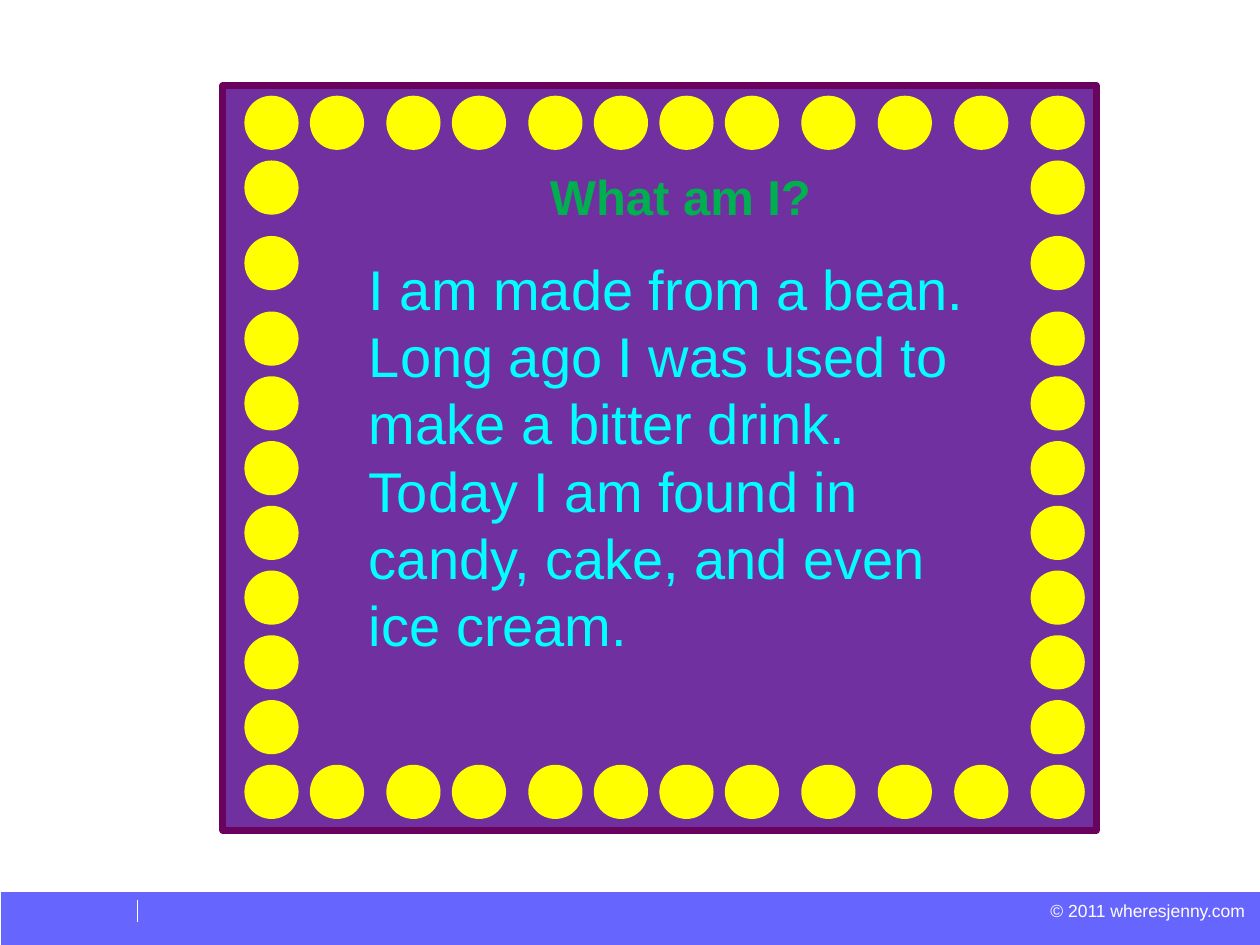
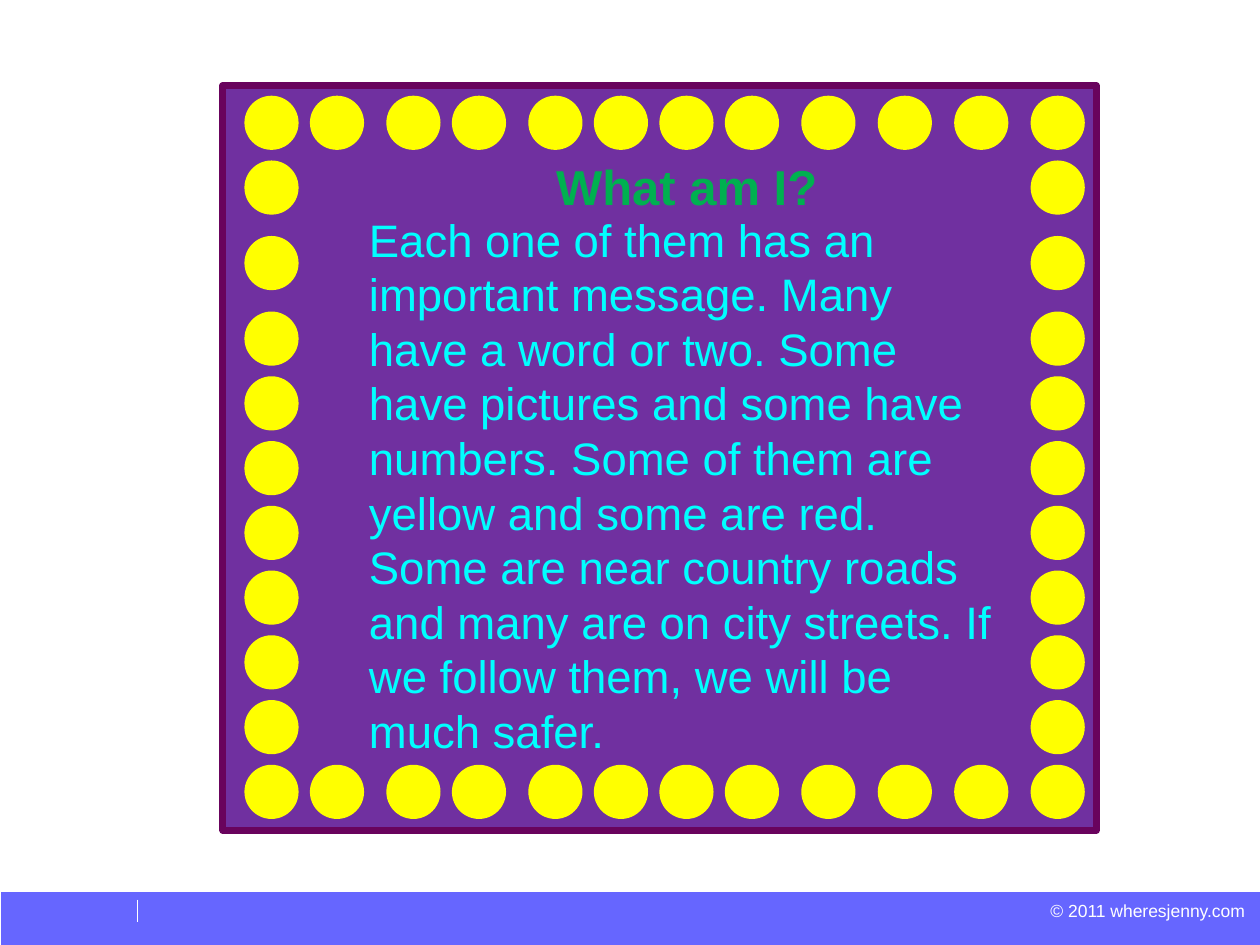
"""Build two riddle slides, each on a purple board framed by yellow dots."""
import itertools

import pptx
import pptx.dml.color
import pptx.enum.shapes
import pptx.enum.text
import pptx.oxml
import pptx.util
from pptx.util import Inches

RIDDLES = [
    {
        "heading": "What am I?",
        "heading_at": (2.78, 1.27, 5.24, 0.55),
        "clue": "I am made from a bean. Long ago I was used to make a bitter drink. "
                "Today I am found in candy, cake, and even ice cream.",
        "clue_at": (2.83, 1.97, 5.24, 3.37),
        "clue_size": 32,
    },
    {
        "heading": "What am I?",
        "heading_at": (2.83, 1.19, 5.24, 0.55),
        "clue": "Each one of them has an important message. Many have a word or two. "
                "Some have pictures and some have numbers. Some of them are yellow and "
                "some are red. Some are near country roads and many are on city streets. "
                "If we follow them, we will be much safer.",
        "clue_at": (2.83, 1.63, 5.24, 4.5),
        "clue_size": 26,
    },
]
COPYRIGHT = "© 2011 wheresjenny.com"
COLOURS = {"board": "7030A0", "border": "69035D", "dot": "FFFF00", "heading": "00B050",
           "clue": "00FFFF", "band": "6666FF", "footer": "FFFFFF"}
BOARD_AT = (1.77, 0.68, 6.93, 5.91)
BAND_AT = (0.01, 7.08, 9.99, 0.42)
COPYRIGHT_AT = (8.32, 7.14, 1.56, 0.17)
DIVIDER_AT = (1.09, 7.14, 1.09, 7.32)
DOT_SIZE = 0.43
ACROSS = {"start": 1.94, "end": 8.18, "gaps": (6, 7, 6, 7, 6, 6, 6, 7, 7, 7, 7)}
DOWN = {"start": 0.76, "end": 6.07, "gaps": (6, 7, 7, 6, 6, 6, 6, 6, 6, 6)}
SHAPES = pptx.enum.shapes.MSO_SHAPE
ALIGN = pptx.enum.text.PP_ALIGN


def colour(part):
    """Return the colour of a named part."""
    return pptx.dml.color.RGBColor.from_string(COLOURS[part])


def inches(place):
    """Convert a tuple of numbers to lengths."""
    return [Inches(length) for length in place]


def dot_stops(side):
    """Spread dots between the ends of a side in proportion to its gaps."""
    unit = (side["end"] - side["start"]) / sum(side["gaps"])
    return [side["start"] + unit * steps
            for steps in itertools.accumulate(side["gaps"], initial=0)]


def add_filled(shapes, preset, place, part, border=None):
    """Add a flat preset shape, with an optional border."""
    shape = shapes.add_shape(preset, *inches(place))
    shape.shadow.inherit = False
    shape.fill.solid()
    shape.fill.fore_color.rgb = colour(part)
    if border:
        shape.line.color.rgb = colour(border)
        shape.line.width = pptx.util.Pt(4)
    else:
        shape.line.fill.background()


def write(box, text, part, size, align, frame_format, bold=False, spacing=1.0):
    """Write one formatted paragraph into a box."""
    frame = box.text_frame
    frame.text = text
    frame_format = {"auto_size": pptx.enum.text.MSO_AUTO_SIZE.NONE,
                    "vertical_anchor": pptx.enum.text.MSO_ANCHOR.TOP, **frame_format}
    for name, value in frame_format.items():
        setattr(frame, name, value)
    paragraph = frame.paragraphs[0]
    paragraph.alignment = align
    paragraph.line_spacing = spacing
    font_format = {"name": "Arial", "size": pptx.util.Pt(size), "bold": bold}
    for name, value in font_format.items():
        setattr(paragraph.font, name, value)
    paragraph.font.color.rgb = colour(part)


def add_footer(slide):
    """Add the band, the copyright line and the divider."""
    add_filled(slide.shapes, SHAPES.RECTANGLE, BAND_AT, "band")
    margins = {f"margin_{side}": 0 for side in ("left", "top", "right", "bottom")}
    write(slide.shapes.add_textbox(*inches(COPYRIGHT_AT)), COPYRIGHT, "footer", 10,
          ALIGN.RIGHT, {"word_wrap": False, **margins})
    divider = slide.shapes.add_connector(
        pptx.enum.shapes.MSO_CONNECTOR.STRAIGHT, *inches(DIVIDER_AT))
    divider.line.color.rgb = colour("footer")
    divider.line.width = pptx.util.Pt(0.75)
    divider.element.spPr.append(pptx.oxml.parse_xml(
        '<a:effectLst xmlns:a="http://schemas.openxmlformats.org/drawingml/2006/main"/>'))


def add_board(slide):
    """Add the board with its frame of dots as one group."""
    board = slide.shapes.add_group_shape().shapes
    add_filled(board, SHAPES.RECTANGLE, BOARD_AT, "board", "border")
    columns, rows = dot_stops(ACROSS), dot_stops(DOWN)
    ends = [(left, top) for top in (rows[0], rows[-1]) for left in columns]
    sides = [(left, top) for left in (columns[-1], columns[0]) for top in rows[1:-1]]
    for left, top in ends + sides:
        add_filled(board, SHAPES.OVAL, (left, top, DOT_SIZE, DOT_SIZE), "dot")


def add_riddle(slide, riddle):
    """Place the heading in front of the board and the clue below it."""
    heading = slide.shapes.title
    heading.element.getparent().append(heading.element)
    position = zip(("left", "top", "width", "height"), inches(riddle["heading_at"]))
    for name, value in position:
        setattr(heading, name, value)
    write(heading, riddle["heading"], "heading", 28, ALIGN.CENTER,
          {"word_wrap": True}, bold=True)
    size = riddle["clue_size"]
    write(slide.shapes.add_textbox(*inches(riddle["clue_at"])), riddle["clue"], "clue",
          size, ALIGN.LEFT, {"word_wrap": True}, spacing=pptx.util.Pt(size * 1.2))


def main():
    """Build and save the slides."""
    deck = pptx.Presentation()
    deck.slide_width, deck.slide_height = Inches(10), Inches(7.5)
    title_only = deck.slide_layouts[5]
    for riddle in RIDDLES:
        slide = deck.slides.add_slide(title_only)
        add_footer(slide)
        add_board(slide)
        add_riddle(slide, riddle)
    deck.save("out.pptx")


if __name__ == "__main__":
    main()
